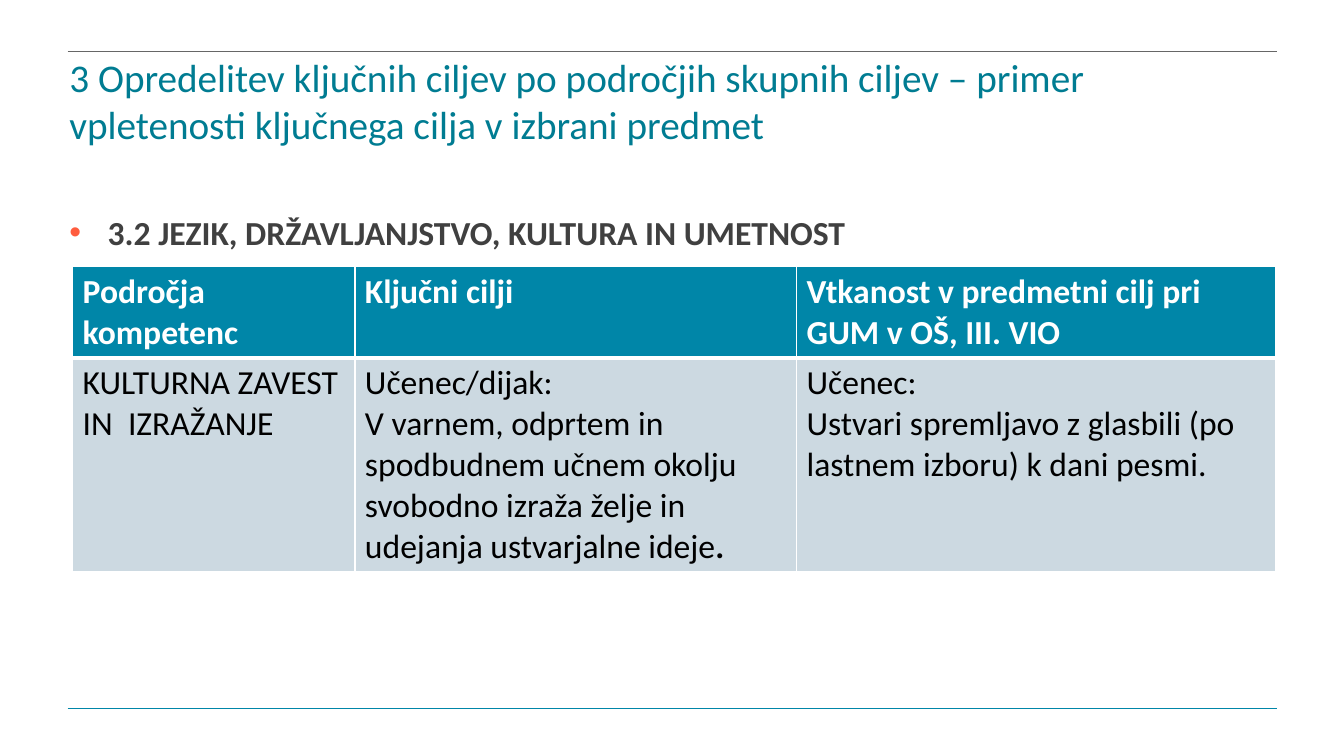
from lxml.etree import SubElement
from pptx import Presentation
from pptx.dml.color import RGBColor
from pptx.enum.shapes import MSO_CONNECTOR
from pptx.oxml.ns import qn
from pptx.util import Inches, Pt

TEAL = RGBColor(0x00, 0x86, 0xA8)
DEEP = RGBColor(0x00, 0x7C, 0x92)
CORAL = RGBColor(0xFF, 0x5C, 0x3E)
DARK = RGBColor(0x40, 0x40, 0x40)
GREY = RGBColor(0x66, 0x66, 0x66)
PALE = RGBColor(0xCC, 0xD9, 0xE1)
WHITE = RGBColor(0xFF, 0xFF, 0xFF)
BLACK = RGBColor(0x00, 0x00, 0x00)

TITLE = ("3 Opredelitev ključnih ciljev po področjih skupnih ciljev – primer "
         "vpletenosti ključnega cilja v izbrani predmet")
TOPIC = "3.2 JEZIK, DRŽAVLJANJSTVO, KULTURA IN UMETNOST"
WIDTHS = (2.8, 4.38, 4.75)
HEIGHTS = (0.91, 2.12)
HEAD = ("Področja kompetenc", "Ključni cilji",
        "Vtkanost v predmetni cilj pri GUM v OŠ, III. VIO")
BODY = (
    [[("KULTURNA ZAVEST IN  IZRAŽANJE", False)]],
    [[("Učenec/dijak:", False)],
     [("V varnem, odprtem in spodbudnem učnem okolju svobodno izraža "
       "želje in udejanja ustvarjalne ideje", False), (".", True)]],
    [[("Učenec:", False)],
     [("Ustvari spremljavo z glasbili (po lastnem izboru) k dani pesmi.",
       False)]],
)


def add_run(para, text, size, color, bold=False):
    run = para.add_run()
    run.text = text
    font = run.font
    font.name = "Calibri"
    font.size = Pt(size)
    font.bold = bold
    font.color.rgb = color


def add_rule(slide, y, color, width):
    rule = slide.shapes.add_connector(
        MSO_CONNECTOR.STRAIGHT, Inches(0.67), Inches(y), Inches(12.67), Inches(y))
    rule.line.color.rgb = color
    rule.line.width = Pt(width)
    SubElement(rule._element.spPr, qn("a:effectLst"))


def add_text(slide, y, width, height):
    box = slide.shapes.add_textbox(
        Inches(0.59), Inches(y), Inches(width), Inches(height))
    box.text_frame.word_wrap = True
    return box.text_frame.paragraphs[0]


def add_bullet(para, color):
    props = para._p.get_or_add_pPr()
    props.set("marL", str(Inches(0.38)))
    props.set("indent", str(-Inches(0.38)))
    tint = SubElement(props, qn("a:buClr"))
    SubElement(tint, qn("a:srgbClr"), val=str(color))
    SubElement(props, qn("a:buFont"), typeface="Arial")
    SubElement(props, qn("a:buChar"), char="•")


def add_edges(cell, top, bottom):
    props = cell._tc.get_or_add_tcPr()
    for side, width in (("L", 1), ("R", 1), ("T", top), ("B", bottom)):
        edge = SubElement(props, qn("a:ln" + side), w=str(Pt(width)))
        fill = SubElement(edge, qn("a:solidFill"))
        SubElement(fill, qn("a:srgbClr"), val=str(WHITE))


def fill_cell(cell, paras, color, back, top, bottom):
    add_edges(cell, top, bottom)
    cell.fill.solid()
    cell.fill.fore_color.rgb = back
    frame = cell.text_frame
    for i, runs in enumerate(paras):
        para = frame.add_paragraph() if i else frame.paragraphs[0]
        for text, bold in runs:
            add_run(para, text, 24, color, bold)


def add_goals(slide):
    table = slide.shapes.add_table(
        2, 3, Inches(0.72), Inches(2.64),
        Inches(sum(WIDTHS)), Inches(sum(HEIGHTS))).table
    for row, height in zip(table.rows, HEIGHTS):
        row.height = Inches(height)
    for i, width in enumerate(WIDTHS):
        table.columns[i].width = Inches(width)
        fill_cell(table.cell(0, i), [[(HEAD[i], True)]], WHITE, TEAL, 1, 3)
        fill_cell(table.cell(1, i), BODY[i], BLACK, PALE, 3, 1)


def main():
    deck = Presentation()
    deck.slide_width = Inches(13.33)
    deck.slide_height = Inches(7.5)
    slide = deck.slides.add_slide(deck.slide_layouts[6])
    add_rule(slide, 7.03, TEAL, 1)
    add_rule(slide, 0.51, GREY, 0.75)
    add_run(add_text(slide, 0.48, 11.8, 1.05), TITLE, 28, DEEP)
    topic = add_text(slide, 2.05, 12, 0.55)
    add_bullet(topic, CORAL)
    add_run(topic, TOPIC, 24, DARK, True)
    add_goals(slide)
    deck.save("out.pptx")


if __name__ == "__main__":
    main()
